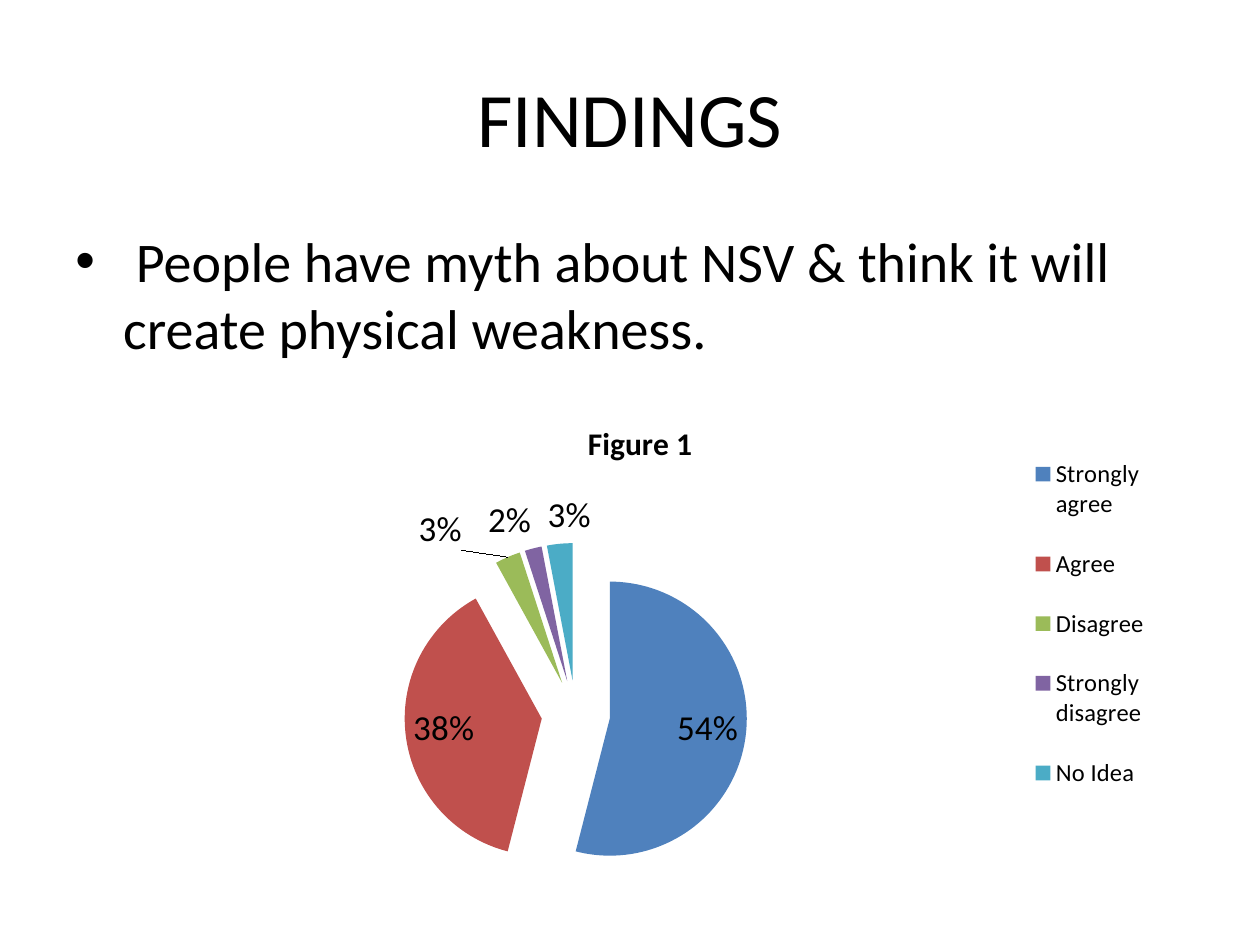
from lxml import etree
from pptx import Presentation
from pptx.chart.data import CategoryChartData
from pptx.dml.color import RGBColor
from pptx.enum.chart import XL_CHART_TYPE, XL_LABEL_POSITION, XL_LEGEND_POSITION
from pptx.enum.text import MSO_ANCHOR, PP_ALIGN
from pptx.oxml.ns import qn
from pptx.util import Inches, Pt

PIE = XL_CHART_TYPE.PIE
INSIDE, OUTSIDE = XL_LABEL_POSITION.INSIDE_END, XL_LABEL_POSITION.OUTSIDE_END
RIGHT = XL_LEGEND_POSITION.RIGHT
MIDDLE, TOP = MSO_ANCHOR.MIDDLE, MSO_ANCHOR.TOP
CENTER, LEFT = PP_ALIGN.CENTER, PP_ALIGN.LEFT

COLORS = {"text": "000000", "Strongly agree": "4F81BD", "Agree": "C0504D",
          "Disagree": "9BBB59", "Strongly disagree": "8064A2", "No Idea": "4BACC6"}
ANSWERS = {"Strongly agree": 0.54, "Agree": 0.38, "Disagree": 0.03,
           "Strongly disagree": 0.02, "No Idea": 0.03}
LABEL_SHIFTS = {"Strongly agree": (0, 0.03), "Agree": (0, 0.03),
                "Disagree": (-0.04, 0), "No Idea": (0.03, 0)}


def style_font(font, size, bold=False):
    for name, value in {"name": "Calibri", "size": Pt(size), "bold": bold}.items():
        setattr(font, name, value)
    font.color.rgb = RGBColor.from_string(COLORS["text"])


def make_layout(**values):
    """Return a manual chart layout, in fractions of the chart's size."""
    layout = etree.Element(qn("c:layout"))
    manual = etree.SubElement(layout, qn("c:manualLayout"))
    for name, value in values.items():
        etree.SubElement(manual, qn(f"c:{name}")).set("val", str(value))
    return layout


deck = Presentation()
deck.slide_width, deck.slide_height = Inches(10), Inches(7.5)
slide = deck.slides.add_slide(deck.slide_layouts[6])

# Heading and bullet
texts = [
    ("FINDINGS", 0.3, 1.25, 44, MIDDLE, CENTER),
    (" People have myth about NSV & think it will create physical weakness.",
     1.75, 5.33, 32, TOP, LEFT),
]
for words, top, height, size, anchor, align in texts:
    box = slide.shapes.add_textbox(Inches(0.5), Inches(top), Inches(9), Inches(height))
    box.text_frame.word_wrap = True
    box.text_frame.vertical_anchor = anchor
    para = box.text_frame.paragraphs[0]
    para.alignment = align
    span = para.add_run()
    span.text = words
    style_font(span.font, size)

para.space_before = Pt(6.4)
bullet_props = para._p.get_or_add_pPr()
bullet_props.set("marL", str(Inches(0.38)))
bullet_props.set("indent", str(-Inches(0.38)))
etree.SubElement(bullet_props, qn("a:buFont")).set("typeface", "Arial")
etree.SubElement(bullet_props, qn("a:buChar")).set("char", "•")

# Pie chart
data = CategoryChartData(number_format="0%")
data.categories = list(ANSWERS)
data.add_series("Figure 1", list(ANSWERS.values()))
chart = slide.shapes.add_chart(PIE, Inches(0.83), Inches(3.17), Inches(8.5), Inches(4), data).chart
style_font(chart.font, 10)

chart.has_title = True
chart.chart_title.text_frame.text = "Figure 1"
style_font(chart.chart_title.text_frame.paragraphs[0].runs[0].font, 18, bold=True)

chart.has_legend = True
chart.legend.position = RIGHT
chart.legend.include_in_layout = False
style_font(chart.legend.font, 14)

plot = chart.plots[0]
plot.vary_by_categories = True
series = plot.series[0]
labels = series.data_labels
labels.show_value = True
labels.number_format = "0%"
labels.number_format_is_linked = False
style_font(labels.font, 20)

for index, (answer, share) in enumerate(ANSWERS.items()):
    point = series.points[index]
    point.format.fill.solid()
    point.format.fill.fore_color.rgb = RGBColor.from_string(COLORS[answer])
    style_font(point.data_label.font, 20)
    point.data_label.position = INSIDE if share > 0.1 else OUTSIDE

# Exploded slices, and places for plot, legend and the moved labels
explosion = etree.Element(qn("c:explosion"))
explosion.set("val", "25")
series._element.find(qn("c:dPt")).addprevious(explosion)

root = chart._chartSpace
plot_area = root.find(".//" + qn("c:plotArea"))
for old in plot_area.findall(qn("c:layout")):
    plot_area.remove(old)
plot_area.insert(0, make_layout(layoutTarget="inner", xMode="edge", yMode="edge",
                                x=0.28, y=0.28, w=0.32, h=0.69))

legend = root.find(".//" + qn("c:legend"))
for old in legend.findall(qn("c:layout")):
    legend.remove(old)
legend.find(qn("c:legendPos")).addnext(
    make_layout(xMode="edge", yMode="edge", x=0.85, y=0.06, w=0.14, h=0.77))

for answer, label in zip(ANSWERS, root.findall(".//" + qn("c:dLbl"))):
    if answer in LABEL_SHIFTS:
        shift_x, shift_y = LABEL_SHIFTS[answer]
        label.find(qn("c:idx")).addnext(make_layout(x=shift_x, y=shift_y))

deck.save("out.pptx")
